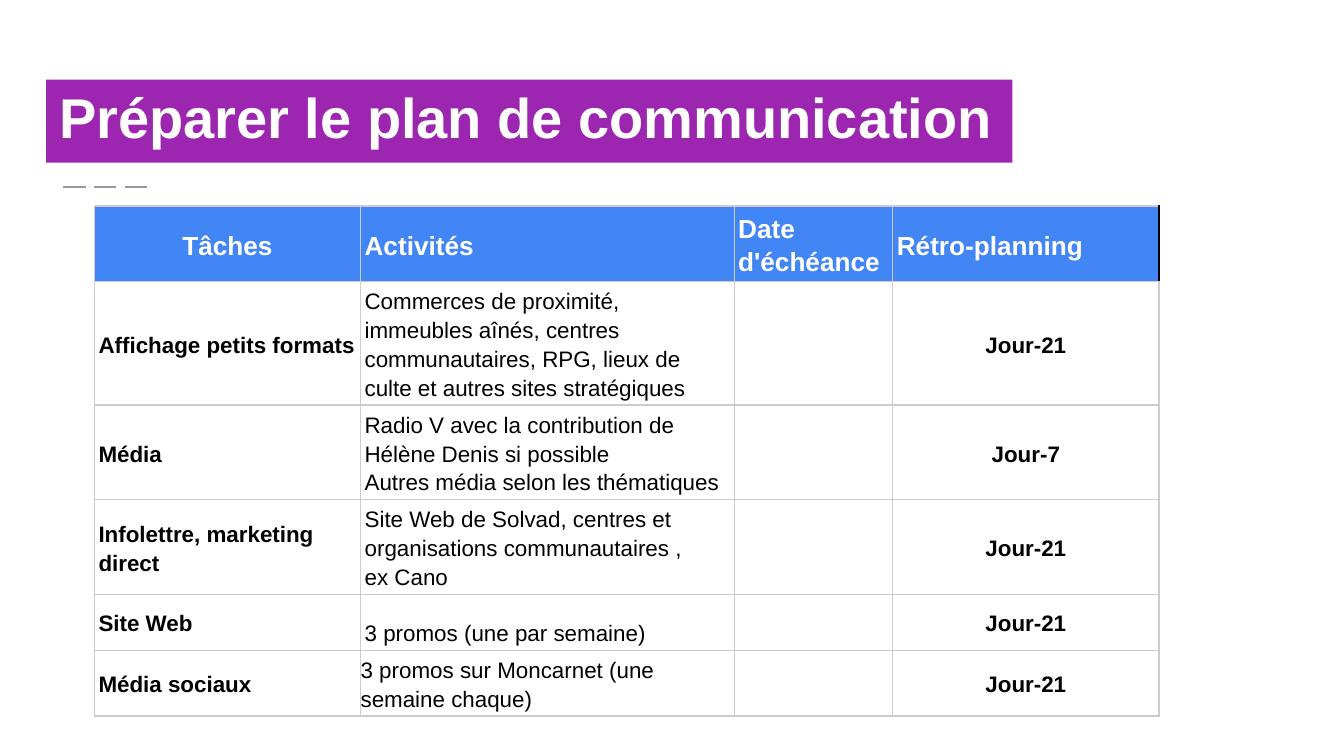
from lxml.etree import SubElement as Sub
from pptx import Presentation
from pptx.dml.color import RGBColor as RGB
from pptx.enum.dml import MSO_LINE as Dash
from pptx.enum.shapes import MSO_CONNECTOR as Link, MSO_SHAPE as Form
from pptx.enum.text import MSO_ANCHOR as Anchor, PP_ALIGN as Align
from pptx.oxml.ns import qn
from pptx.util import Inches, Pt

HUES = {
    "title": "9C26B0",
    "head": "4285F4",
    "rule": "999999",
    "grid": "CCCCCC",
    "edge": "000000",
    "ink": "000000",
    "white": "FFFFFF",
}
WIDE = Inches(10)
HIGH = WIDE * 9 // 16
COLS = (1.98, 2.78, 1.18, 1.98)
PAD = Inches(0.03)
HEADS = ("Tâches", "Activités", "Date d'échéance", "Rétro-planning")
TASKS = (
    ("Affichage petits formats",
     "Commerces de proximité, immeubles aînés, centres communautaires, "
     "RPG, lieux de culte et autres sites stratégiques", "", "Jour-21"),
    ("Média",
     "Radio V avec la contribution de Hélène Denis si possible\n"
     "Autres média selon les thématiques", "", "Jour-7"),
    ("Infolettre, marketing direct",
     "Site Web de Solvad, centres et organisations communautaires ,\nex Cano",
     "", "Jour-21"),
    ("Site Web", "3 promos (une par semaine)", "", "Jour-21"),
    ("Média sociaux", "3 promos sur Moncarnet (une semaine chaque)", "", "Jour-21"),
)


def hue(name):
    """Return the named colour."""
    return RGB.from_string(HUES[name])


def span(x, y, w, h):
    """Turn percentages of the slide into a box of lengths."""
    return tuple(int(n * side / 100) for n, side in
                 zip((x, y, w, h), (WIDE, HIGH, WIDE, HIGH)))


def style(para, size, tint, bold, align=Align.LEFT):
    """Set the font and alignment of a paragraph."""
    font = para.font
    font.name, font.size, font.bold = "Arial", Pt(size), bold
    font.color.rgb = hue(tint)
    para.alignment = align


def border(cell, right):
    """Draw the four borders of a cell."""
    props = cell._tc.get_or_add_tcPr()
    sides = {"lnL": "grid", "lnR": right, "lnT": "grid", "lnB": "grid"}
    for side, tint in sides.items():
        line = Sub(props, qn(f"a:{side}"), w=str(Pt(0.75)))
        fill = Sub(line, qn("a:solidFill"))
        Sub(fill, qn("a:srgbClr"), val=HUES[tint])


def banner(slide, box):
    """Place the title on its purple band."""
    band = slide.shapes.add_shape(Form.RECTANGLE, *box)
    band.shadow.inherit = False
    band.fill.solid()
    band.fill.fore_color.rgb = hue("title")
    band.line.fill.background()
    frame = band.text_frame
    frame.word_wrap = True
    frame.vertical_anchor = Anchor.BOTTOM
    frame.margin_left = frame.margin_right = Inches(0.1)
    frame.margin_top = frame.margin_bottom = Inches(0.1)
    frame.text = "Préparer le plan de communication"
    style(frame.paragraphs[0], 30, "white", True)


def dashes(slide, box):
    """Draw the dashed rule under the title."""
    x, y, w, h = box
    rule = slide.shapes.add_connector(Link.STRAIGHT, x, y, x + w, y + h)
    rule.line.color.rgb = hue("rule")
    rule.line.width = Pt(1.5)
    rule.line.dash_style = Dash.LONG_DASH
    Sub(rule._element.spPr, qn("a:effectLst"))


def fill_cell(cell, text, row, col):
    """Write and style one cell by its row and column."""
    head, last = row == 0, col == len(COLS) - 1
    plain = col == 1 and not head
    flush = plain and row == len(TASKS)
    cell.margin_left = cell.margin_right = 0 if flush else PAD
    cell.margin_top = cell.margin_bottom = PAD
    cell.vertical_anchor = Anchor.BOTTOM if plain else Anchor.MIDDLE
    border(cell, "edge" if head and last else "grid")
    if head or flush:
        cell.fill.solid()
        cell.fill.fore_color.rgb = hue("head" if head else "white")
    else:
        cell.fill.background()
    if not text:
        return
    cell.text = text
    mid = col == 0 if head else last
    for para in cell.text_frame.paragraphs:
        style(para, 14 if head else 12, "white" if head else "ink",
              not plain, Align.CENTER if mid else Align.LEFT)
        para.line_spacing = 1.15


def plan(slide, box):
    """Place the table of tasks in the box."""
    rows = (HEADS, *TASKS)
    grid = slide.shapes.add_table(len(rows), len(COLS), *box).table
    grid.first_row = grid.horz_banding = False
    for col, part in zip(grid.columns, COLS):
        col.width = int(box[2] * part / sum(COLS))
    for r, texts in enumerate(rows):
        for c, text in enumerate(texts):
            fill_cell(grid.cell(r, c), text, r, c)


def main():
    """Build and save the slide."""
    deck = Presentation()
    deck.slide_width, deck.slide_height = WIDE, HIGH
    slide = deck.slides.add_slide(deck.slide_layouts[6])
    dashes(slide, span(4.7, 24.75, 6.7, 0))
    banner(slide, span(3.43, 10.53, 7.19 * 10, 11))
    plan(slide, span(7.03, 27.25, 79.2, 44.5))
    deck.save("out.pptx")


if __name__ == "__main__":
    main()
